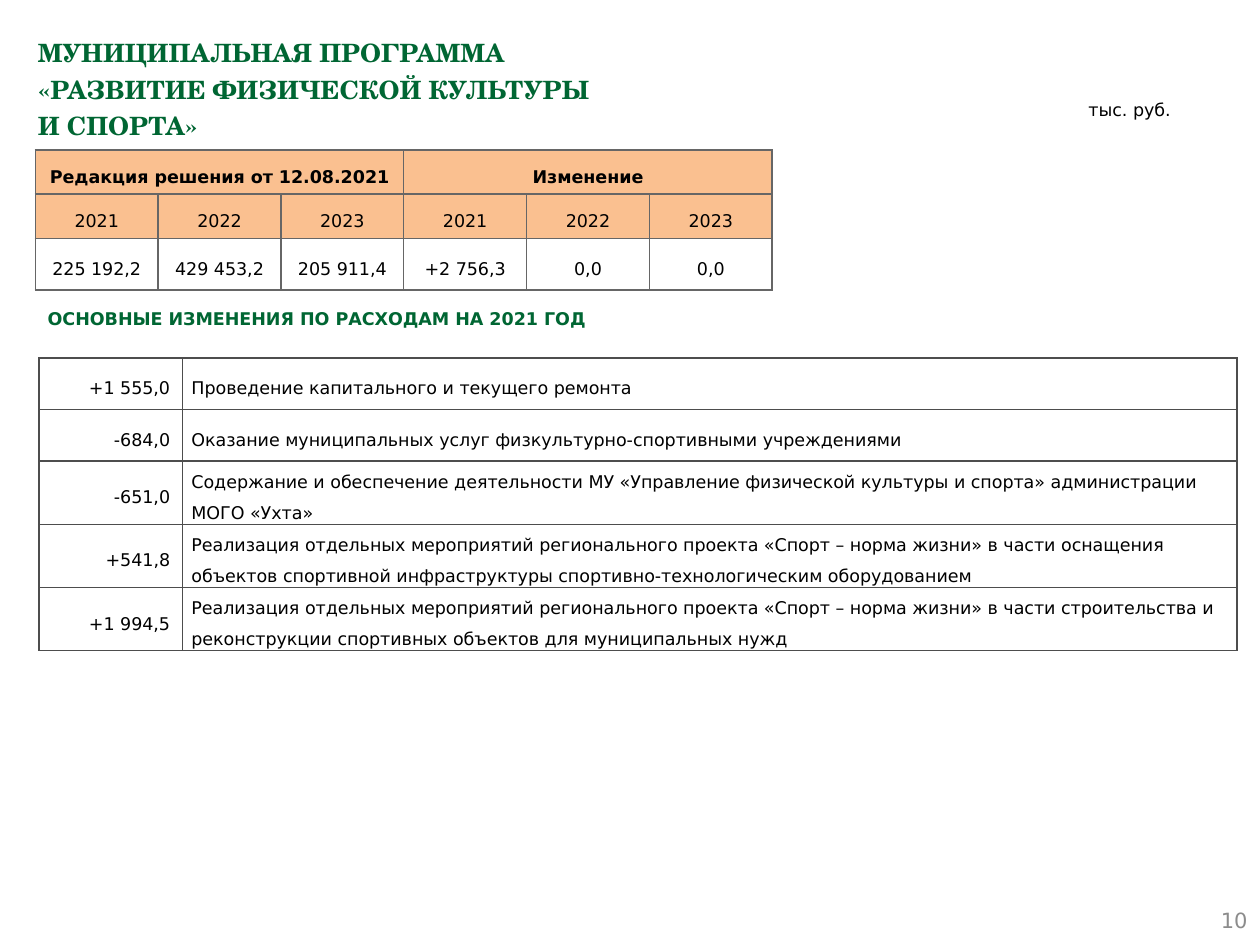
"""Build the budget slide for the sports programme."""
from dataclasses import dataclass

import lxml.etree
import pptx
import pptx.dml.color
import pptx.enum.shapes
import pptx.enum.text
import pptx.oxml.ns
import pptx.util

Inches = pptx.util.Inches
Align = pptx.enum.text.PP_ALIGN
Anchor = pptx.enum.text.MSO_ANCHOR

HUES = {
    "green": "006633",
    "black": "000000",
    "gray": "8C8C8C",
    "peach": "FAC090",
    "edge": "666666",
    "dark": "4D4D4D",
}
SANS = "DejaVu Sans"
SERIF = "TeX Gyre Schola"


@dataclass(frozen=True)
class Style:
    size: float = 10
    hue: str = "black"
    bold: bool = False
    font: str = SANS
    align: Align = Align.LEFT
    lead: float = 1.0
    after: float = 0


@dataclass(frozen=True)
class Box:
    left: float
    top: float
    width: float
    height: float

    def spans(self) -> tuple:
        return tuple(Inches(n) for n in (self.left, self.top, self.width, self.height))


@dataclass(frozen=True)
class Look:
    style: Style
    pad: tuple
    edge: str
    fill: str = ""


@dataclass(frozen=True)
class Change:
    sum: str
    cause: str


def color(name: str) -> pptx.dml.color.RGBColor:
    return pptx.dml.color.RGBColor.from_string(HUES[name])


def write(frame, text: str, style: Style, anchor: Anchor = Anchor.TOP) -> None:
    frame.word_wrap = True
    frame.vertical_anchor = anchor
    para = frame.paragraphs[0]
    para.alignment = style.align
    para.line_spacing = style.lead
    para.space_before = pptx.util.Pt(0)
    para.space_after = pptx.util.Pt(style.after)
    for index, line in enumerate(text.split("\n")):
        if index:
            para.add_line_break()
        run = para.add_run()
        run.text = line
        run.font.name = style.font
        run.font.size = pptx.util.Pt(style.size)
        run.font.bold = style.bold
        run.font.color.rgb = color(style.hue)


def add_label(slide, box: Box, text: str, style: Style, anchor: Anchor = Anchor.TOP) -> None:
    write(slide.shapes.add_textbox(*box.spans()).text_frame, text, style, anchor)


def add_title(slide, box: Box, text: str, style: Style) -> None:
    title = slide.shapes.title
    title.left, title.top, title.width, title.height = box.spans()
    title.text_frame.auto_size = pptx.enum.text.MSO_AUTO_SIZE.NONE
    write(title.text_frame, text, style)


def add_banner(slide, box: Box, text: str, style: Style) -> None:
    kind = pptx.enum.shapes.MSO_SHAPE.PENTAGON
    shape = slide.shapes.add_shape(kind, *box.spans())
    shape.adjustments[0] = 0
    shape.shadow.inherit = False
    shape.fill.background()
    shape.line.fill.background()
    write(shape.text_frame, text, style, Anchor.MIDDLE)


def draw_edge(cell, hue: str) -> None:
    qn, sub = pptx.oxml.ns.qn, lxml.etree.SubElement
    props = cell._tc.get_or_add_tcPr()
    for side in ("lnL", "lnR", "lnT", "lnB"):
        line = sub(props, qn(f"a:{side}"), w=str(pptx.util.Pt(1)))
        fill = sub(line, qn("a:solidFill"))
        sub(fill, qn("a:srgbClr"), val=HUES[hue])


def dress(cell, look: Look) -> None:
    draw_edge(cell, look.edge)
    if look.fill:
        cell.fill.solid()
        cell.fill.fore_color.rgb = color(look.fill)
    else:
        cell.fill.background()
    cell.margin_left = cell.margin_right = Inches(look.pad[0])
    cell.margin_top = cell.margin_bottom = Inches(look.pad[1])
    cell.vertical_anchor = Anchor.MIDDLE


def add_grid(slide, box: Box, rows: list, cols: list, highs: list, looks: list):
    table = slide.shapes.add_table(len(rows), len(cols), *box.spans()).table
    table.first_row = table.horz_banding = False
    for col, width in zip(table.columns, cols):
        col.width = Inches(width)
    for row, high, texts, line in zip(table.rows, highs, rows, looks):
        row.height = Inches(high)
        for cell, text, look in zip(row.cells, texts, line):
            dress(cell, look)
            if text:
                write(cell.text_frame, text, look.style, Anchor.MIDDLE)
    return table


def add_totals(slide) -> None:
    years = ["2021", "2022", "2023"]
    rows = [
        ["Редакция решения от 12.08.2021", "", "", "Изменение", "", ""],
        years * 2,
        ["225 192,2", "429 453,2", "205 911,4", "+2 756,3", "0,0", "0,0"],
    ]
    plain = Style(align=Align.CENTER, lead=1.5)
    strong = Style(bold=True, align=Align.CENTER, lead=1.5)
    pad = (0.05, 0.05)
    looks = [
        [Look(strong, pad, "edge", "peach")] * 6,
        [Look(plain, pad, "edge", "peach")] * 6,
        [Look(plain, pad, "edge")] * 6,
    ]
    box = Box(0.28, 1.19, 5.85, 1.11)
    table = add_grid(slide, box, rows, [box.width / 6] * 6, [0.35, 0.35, 0.41], looks)
    for start in (0, 3):
        table.cell(0, start).merge(table.cell(0, start + 2))


def add_changes(slide) -> None:
    project = "Реализация отдельных мероприятий регионального проекта «Спорт – норма жизни» в части "
    items = [
        Change("+1 555,0", "Проведение капитального и текущего ремонта"),
        Change("-684,0", "Оказание муниципальных услуг физкультурно-спортивными учреждениями"),
        Change("-651,0", "Содержание и обеспечение деятельности МУ «Управление физической "
               "культуры и спорта» администрации МОГО «Ухта»"),
        Change("+541,8", project + "оснащения объектов спортивной инфраструктуры "
               "спортивно-технологическим оборудованием"),
        Change("+1 994,5", project + "строительства и реконструкции спортивных объектов "
               "для муниципальных нужд"),
    ]
    rows = [[item.sum, item.cause] for item in items]
    looks = [
        Look(Style(align=Align.RIGHT, lead=1.5, after=10), (0.1, 0.05), "dark"),
        Look(Style(lead=1.5, after=10), (0.07, 0), "dark"),
    ]
    count = len(rows)
    box = Box(0.31, 2.84, 9.51, 2.05)
    add_grid(slide, box, rows, [1.14, 8.37], [0.41] * count, [looks] * count)


def main() -> None:
    deck = pptx.Presentation()
    deck.slide_width, deck.slide_height = Inches(10), Inches(7.5)
    slide = deck.slides.add_slide(deck.slide_layouts[5])
    add_title(slide, Box(0.2, 0.2, 9.61, 0.79),
              "МУНИЦИПАЛЬНАЯ ПРОГРАММА\n«РАЗВИТИЕ ФИЗИЧЕСКОЙ КУЛЬТУРЫ\nИ СПОРТА»",
              Style(14.4, "green", True, SERIF, lead=1.2))
    add_label(slide, Box(7.67, 7.1, 2.33, 0.4), "10",
              Style(12, "gray", align=Align.RIGHT), Anchor.MIDDLE)
    add_banner(slide, Box(0.28, 2.31, 4.92, 0.43),
               "ОСНОВНЫЕ ИЗМЕНЕНИЯ ПО РАСХОДАМ НА 2021 ГОД", Style(hue="green", bold=True))
    add_label(slide, Box(8.54, 0.7, 1.01, 0.3), "тыс. руб.", Style(lead=1.2))
    add_totals(slide)
    add_changes(slide)
    deck.save("out.pptx")


if __name__ == "__main__":
    main()
